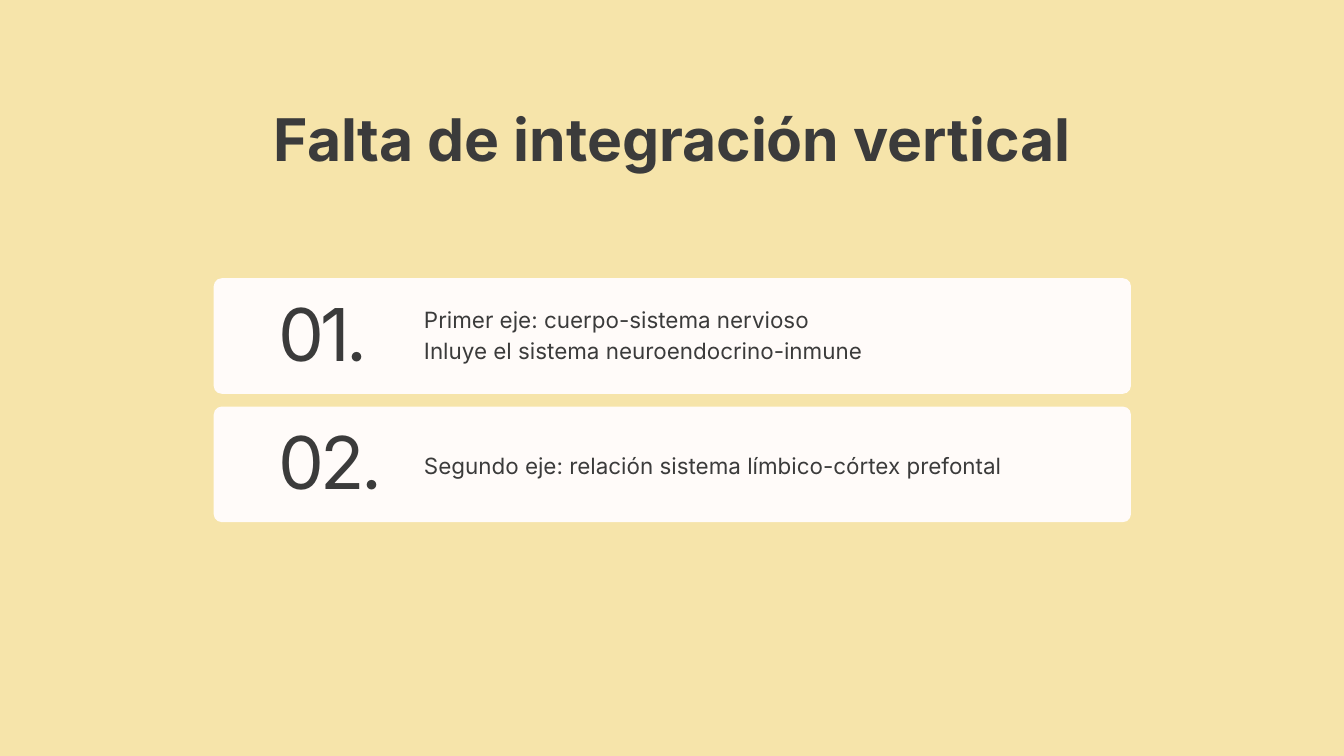
"""Build the slide on the lack of vertical integration, with two numbered axes."""
from pptx import Presentation
from pptx.dml.color import RGBColor
from pptx.enum.shapes import MSO_SHAPE as Shape
from pptx.enum.text import MSO_AUTO_SIZE as AutoSize, PP_ALIGN as Align
from pptx.util import Inches, Pt

COLORS = {"background": "F6E4AA", "card": "FFFBF9", "ink": "3B3B3B"}

deck = Presentation()
deck.slide_width, deck.slide_height = Inches(20), Inches(11.25)
slide = deck.slides.add_slide(deck.slide_layouts[6])
slide.background.fill.solid()
slide.background.fill.fore_color.rgb = RGBColor.from_string(COLORS["background"])


def add_text(lines, left, top, width, height, *, size, leading, bold=False,
             align=Align.LEFT, tracking=0):
    frame = slide.shapes.add_textbox(
        Inches(left), Inches(top), Inches(width), Inches(height)).text_frame
    frame.margin_left = frame.margin_right = frame.margin_top = frame.margin_bottom = 0
    frame.word_wrap = True
    frame.auto_size = AutoSize.SHAPE_TO_FIT_TEXT
    for index, line in enumerate(lines):
        paragraph = frame.paragraphs[0] if index == 0 else frame.add_paragraph()
        paragraph.alignment = align
        paragraph.line_spacing = Pt(leading)
        run = paragraph.add_run()
        run.text = line
        run.font.name, run.font.size, run.font.bold = "Inter", Pt(size), bold
        run.font.color.rgb = RGBColor.from_string(COLORS["ink"])
        if tracking:
            run.font._element.set("spc", str(tracking * 100))


add_text(["Falta de integración vertical"], 3.67, 1.63, 12.67, 0.98,
         size=63, leading=68, bold=True, align=Align.CENTER)

CARD_LEFT, CARD_TOP, CARD_WIDTH, CARD_HEIGHT = 3.18, 4.14, 13.65, 1.72
CARD_PITCH, CORNER_RADIUS = 1.91, 0.12
axes = [
    (["Primer eje: cuerpo-sistema nervioso",
      "Inluye el sistema neuroendocrino-inmune"], 0.35, 0.9),
    (["Segundo eje: relación sistema límbico-córtex prefontal"], 0.61, 0.44),
]

for row, (description, offset, height) in enumerate(axes):
    top = CARD_TOP + row * CARD_PITCH
    card = slide.shapes.add_shape(Shape.ROUNDED_RECTANGLE, Inches(CARD_LEFT), Inches(top),
                                  Inches(CARD_WIDTH), Inches(CARD_HEIGHT))
    card.adjustments[0] = CORNER_RADIUS / CARD_HEIGHT
    card.shadow.inherit = False
    card.fill.solid()
    card.fill.fore_color.rgb = RGBColor.from_string(COLORS["card"])
    card.line.fill.background()
    add_text([f"{row + 1:02}."], 4.14, top + 0.41, 1.74, 1.1,
             size=78, leading=74.9, tracking=-4)
    add_text(description, 6.31, top + offset, 9.56, height, size=24, leading=33.6)

deck.save("out.pptx")
